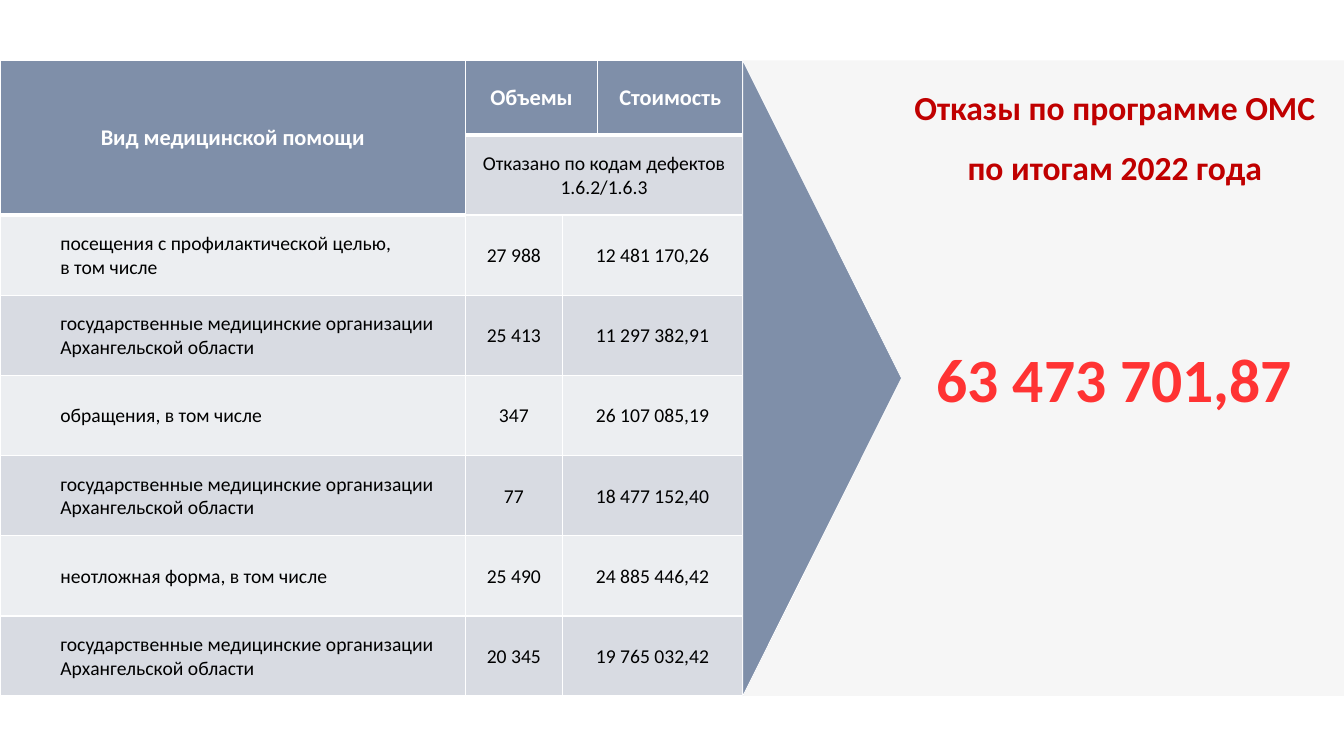
from lxml import etree
from pptx import Presentation
from pptx import util as u
from pptx.dml.color import RGBColor
from pptx.enum import shapes, text
from pptx.oxml import parse_xml
from pptx.oxml.ns import nsdecls, qn

COLORS = {
    "panel": "F2F2F2",
    "slate": "7F8FA9",
    "band_dark": "D8DBE2",
    "band_light": "ECEEF1",
    "white": "FFFFFF",
    "black": "000000",
    "title": "C00000",
    "total": "FF3333",
}
STATE_CLINICS = "государственные медицинские организации Архангельской области"
ROWS = [
    ("посещения с профилактической целью,\nв том числе", "27 988", "12 481 170,26"),
    (STATE_CLINICS, "25 413", "11 297 382,91"),
    ("обращения, в том числе", "347", "26 107 085,19"),
    (STATE_CLINICS, "77", "18 477 152,40"),
    ("неотложная форма, в том числе", "25 490", "24 885 446,42"),
    (STATE_CLINICS, "20 345", "19 765 032,42"),
]
COLUMN_WIDTHS = [11.73, 2.44, 0.89, 3.66]
HEADER_HEIGHT, ROW_HEIGHT = 1.88, 2.02
BAND_TOP, BAND_HEIGHT = 1.52, 16.02
SLIDE_WIDTH, SLIDE_HEIGHT = 33.87, 19.05


def color(name):
    return RGBColor.from_string(COLORS[name])


def write(frame, content, size=14, fill="black", bold=False, align="CENTER",
          anchor="MIDDLE", spacing=None, after=None):
    """Put text into a frame, one paragraph for each line."""
    frame.word_wrap = True
    frame.vertical_anchor = text.MSO_ANCHOR[anchor]
    for index, line in enumerate(content.split("\n")):
        para = frame.paragraphs[0] if index == 0 else frame.add_paragraph()
        para.alignment = text.PP_ALIGN[align]
        para.line_spacing = spacing
        para.space_after = after
        span = para.add_run()
        span.text = line
        span.font.name = "Calibri"
        span.font.size = u.Pt(size)
        span.font.bold = bold
        span.font.color.rgb = color(fill)


class SlideBuilder:
    def __init__(self, page):
        self.page = page

    def shape(self, kind, left, top, width, height, fill=None, line=None, opacity=None):
        box = self.page.shapes.add_shape(
            shapes.MSO_SHAPE[kind], *map(u.Cm, (left, top, width, height)))
        box.shadow.inherit = False
        if fill:
            box.fill.solid()
            box.fill.fore_color.rgb = color(fill)
        else:
            box.fill.background()
        if line:
            box.line.color.rgb = color(line)
            box.line.width = u.Pt(0.5)
        else:
            box.line.fill.background()
        if opacity:
            solid = box._element.spPr.find(qn("a:solidFill"))
            etree.SubElement(solid[0], qn("a:alpha"), val=str(opacity * 1000))
        return box

    def title(self, content, left, top, width, height, **style):
        box = self.page.shapes.title
        box.left, box.top, box.width, box.height = map(u.Cm, (left, top, width, height))
        box.text_frame.auto_size = text.MSO_AUTO_SIZE.NONE
        write(box.text_frame, content, **style)

    def table(self, left, top, widths, heights):
        frame = self.page.shapes.add_table(
            len(heights), len(widths), u.Cm(left), u.Cm(top),
            u.Cm(sum(widths)), u.Cm(sum(heights)))
        grid = frame.table
        for column, width in zip(grid.columns, widths):
            column.width = u.Cm(width)
        for row, height in zip(grid.rows, heights):
            row.height = u.Cm(height)
        return grid

    def cell(self, cell, fill, top_line=1, bottom_line=1):
        properties = cell._tc.get_or_add_tcPr()
        for side, points in zip("LRTB", (1, 1, top_line, bottom_line)):
            properties.append(parse_xml(
                f'<a:ln{side} {nsdecls("a")} w="{u.Pt(points)}"><a:solidFill>'
                f'<a:srgbClr val="{COLORS["white"]}"/></a:solidFill></a:ln{side}>'))
        cell.fill.solid()
        cell.fill.fore_color.rgb = color(fill)
        cell.margin_left = cell.margin_right = cell.margin_top = u.Cm(0.03)
        cell.margin_bottom = 0
        cell.vertical_anchor = text.MSO_ANCHOR.MIDDLE


def is_header(row, column):
    return row == 0 or (row, column) == (1, 0)


def fill_table(builder):
    heights = [HEADER_HEIGHT] + [ROW_HEIGHT] * (len(ROWS) + 1)
    grid = builder.table(0, BAND_TOP, COLUMN_WIDTHS, heights)

    # Fills and borders
    for row in range(len(heights)):
        for column in range(len(COLUMN_WIDTHS)):
            band = "band_dark" if row % 2 else "band_light"
            header = is_header(row, column)
            below_header = row > 0 and is_header(row - 1, column)
            builder.cell(grid.cell(row, column), "slate" if header else band,
                         top_line=3 if below_header else 1,
                         bottom_line=3 if header else 1)

    # Header
    grid.cell(0, 0).merge(grid.cell(1, 0))
    grid.cell(0, 1).merge(grid.cell(0, 2))
    grid.cell(1, 1).merge(grid.cell(1, 3))
    for column, label in ((0, "Вид медицинской помощи"), (1, "Объемы"), (3, "Стоимость")):
        write(grid.cell(0, column).text_frame, label, size=16, fill="white", bold=True)
    write(grid.cell(1, 1).text_frame, "Отказано по кодам дефектов 1.6.2/1.6.3")

    # Body
    for row, (care, volume, cost) in enumerate(ROWS, start=2):
        grid.cell(row, 2).merge(grid.cell(row, 3))
        grid.cell(row, 0).margin_left = u.Cm(1.52)
        write(grid.cell(row, 0).text_frame, care, align="LEFT")
        write(grid.cell(row, 1).text_frame, volume)
        write(grid.cell(row, 2).text_frame, cost)


def main():
    deck = Presentation()
    deck.slide_width, deck.slide_height = u.Cm(SLIDE_WIDTH), u.Cm(SLIDE_HEIGHT)
    page = deck.slides.add_slide(deck.slide_layouts[5])
    builder = SlideBuilder(page)

    # Background band, placed behind the title
    band = builder.shape("RECTANGLE", 0, BAND_TOP, SLIDE_WIDTH, BAND_HEIGHT,
                         fill="panel", opacity=64)
    page.shapes.title._element.addprevious(band._element)

    builder.title("Отказы по программе ОМС по итогам 2022 года", 22.43, 1.55, 11.33, 1.27,
                  size=24, fill="title", bold=True, anchor="TOP",
                  spacing=1.5, after=u.Pt(8))

    fill_table(builder)

    # Arrow leading to the total
    arrow = builder.shape("RIGHT_ARROW", sum(COLUMN_WIDTHS), BAND_TOP, 4, BAND_HEIGHT,
                          fill="slate", line="white")
    arrow.adjustments[0], arrow.adjustments[1] = 0.5, 1

    total = builder.shape("ROUNDED_RECTANGLE", 22.43, 8.23, 11.33, 2.59)
    write(total.text_frame, "63 473 701,87", size=44, fill="total", bold=True)

    deck.save("out.pptx")


if __name__ == "__main__":
    main()
